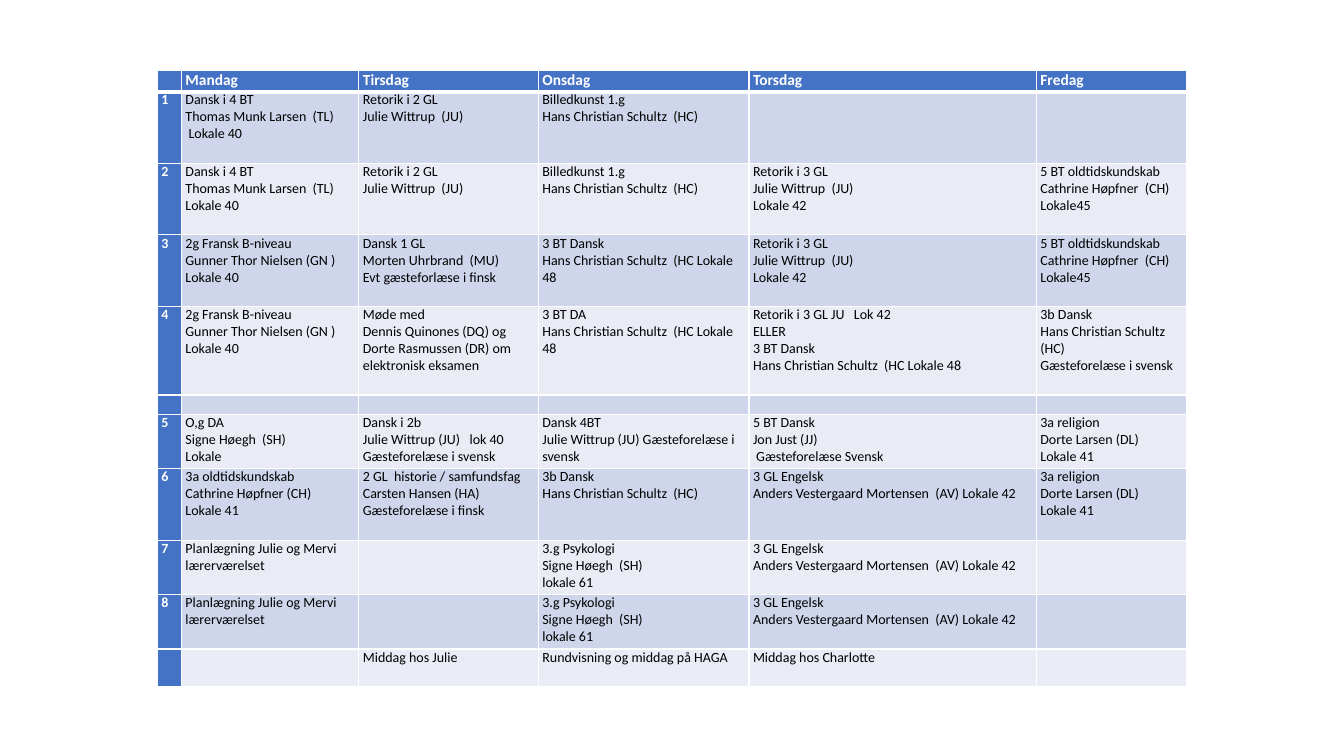
from dataclasses import dataclass
from lxml.etree import SubElement
from pptx import Presentation
from pptx.dml.color import RGBColor
from pptx.oxml.ns import qn
from pptx.util import Emu, Pt


@dataclass(frozen=True)
class Theme:
    font: str = "Calibri"
    header_size: int = 11
    body_size: int = 10
    accent: str = "4472C4"
    bands: tuple = ("E9EBF5", "CFD5EA")
    light: str = "FFFFFF"
    dark: str = "000000"
    thin: int = 1
    thick: int = 3


def px(length):
    return Emu(length * 9144)


def add_border(cell, side, color, width):
    line = SubElement(cell._tc.get_or_add_tcPr(), qn(f"a:ln{side}"), w=str(Pt(width)))
    SubElement(SubElement(line, qn("a:solidFill")), qn("a:srgbClr"), val=color)


theme = Theme()
column_widths = [24, 176, 178, 209, 285, 149]
row_heights = [21, 71, 71, 71, 88, 19, 54, 71, 54, 54, 37]

danish = "Dansk i 4 BT\nThomas Munk Larsen  (TL)\n"
rhetoric_2 = "Retorik i 2 GL\nJulie Wittrup  (JU)"
rhetoric_3 = "Retorik i 3 GL\nJulie Wittrup  (JU)\nLokale 42"
art = "Billedkunst 1.g\nHans Christian Schultz  (HC)"
classics = "5 BT oldtidskundskab\nCathrine Høpfner  (CH) Lokale45"
french = "2g Fransk B-niveau\nGunner Thor Nielsen (GN )\nLokale 40"
schultz_48 = "Hans Christian Schultz  (HC Lokale 48"
religion = "3a religion\nDorte Larsen (DL)\nLokale 41"
english = "3 GL Engelsk\nAnders Vestergaard Mortensen  (AV) Lokale 42"
planning = "Planlægning Julie og Mervi\nlærerværelset"
psychology = "3.g Psykologi\nSigne Høegh  (SH)\nlokale 61"

timetable = [
    ["", "Mandag", "Tirsdag", "Onsdag", "Torsdag", "Fredag"],
    ["1", danish + " Lokale 40", rhetoric_2, art, "", ""],
    ["2", danish + "Lokale 40", rhetoric_2, art, rhetoric_3, classics],
    ["3", french, "Dansk 1 GL\nMorten Uhrbrand  (MU)\nEvt gæsteforlæse i finsk",
     "3 BT Dansk\n" + schultz_48, rhetoric_3, classics],
    ["4", french,
     "Møde med\nDennis Quinones (DQ) og Dorte Rasmussen (DR) om elektronisk eksamen",
     "3 BT DA\n" + schultz_48,
     "Retorik i 3 GL JU   Lok 42\nELLER\n3 BT Dansk\n" + schultz_48,
     "3b Dansk\nHans Christian Schultz  (HC)\nGæsteforelæse i svensk"],
    [""] * 6,
    ["5", "O,g DA\nSigne Høegh  (SH)\nLokale",
     "Dansk i 2b\nJulie Wittrup (JU)   lok 40\nGæsteforelæse i svensk",
     "Dansk 4BT\nJulie Wittrup (JU) Gæsteforelæse i svensk",
     "5 BT Dansk\nJon Just (JJ)\n Gæsteforelæse Svensk", religion],
    ["6", "3a oldtidskundskab\nCathrine Høpfner (CH)\nLokale 41",
     "2 GL  historie / samfundsfag\nCarsten Hansen (HA)\nGæsteforelæse i finsk",
     "3b Dansk\nHans Christian Schultz  (HC)", english, religion],
    ["7", planning, "", psychology, english, ""],
    ["8", planning, "", psychology, english, ""],
    ["", "", "Middag hos Julie", "Rundvisning og middag på HAGA",
     "Middag hos Charlotte", ""],
]

deck = Presentation()
deck.slide_width, deck.slide_height = px(1333), px(750)
page = deck.slides.add_slide(deck.slide_layouts[6])
frame = page.shapes.add_table(
    len(row_heights), len(column_widths), px(156), px(70),
    px(sum(column_widths)), px(sum(row_heights)),
)
table = frame.table
table.first_col = True
for column, width in zip(table.columns, column_widths):
    column.width = px(width)
for row, height in zip(table.rows, row_heights):
    row.height = px(height)

for row_index, lessons in enumerate(timetable):
    for column_index, lesson in enumerate(lessons):
        cell = table.cell(row_index, column_index)
        heading = row_index == 0 or column_index == 0
        size = Pt(theme.body_size if row_index else theme.header_size)
        thick_side = {0: "B", 1: "T"}.get(row_index)
        for side in "LRTB":
            width = theme.thick if side == thick_side else theme.thin
            add_border(cell, side, theme.light, width)
        cell.fill.solid()
        cell.fill.fore_color.rgb = RGBColor.from_string(
            theme.accent if heading else theme.bands[row_index % 2])
        cell.margin_left = cell.margin_right = px(4)
        cell.margin_top = cell.margin_bottom = 0
        cell.text_frame.text = lesson
        for para in cell.text_frame.paragraphs:
            for span in para.runs:
                span.font.name = theme.font
                span.font.size = size
                span.font.bold = heading
                span.font.color.rgb = RGBColor.from_string(
                    theme.light if heading else theme.dark)
            if not para.runs:
                SubElement(para._p, qn("a:endParaRPr"), sz=str(size.centipoints))

deck.save("out.pptx")
